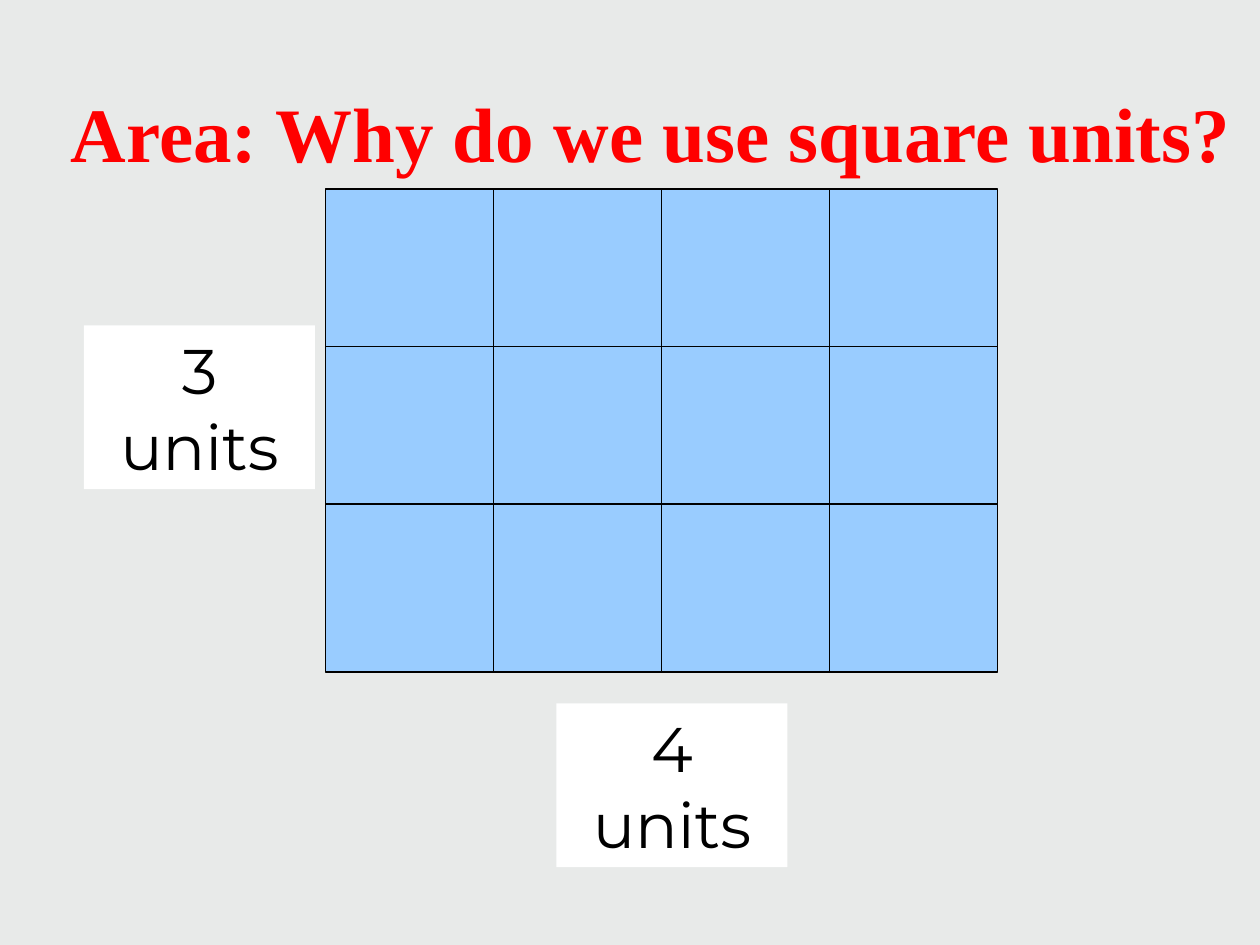
"""Build a slide that shows a 3 by 4 area split into square units."""
from lxml.etree import SubElement
from pptx import Presentation
from pptx.dml.color import RGBColor
from pptx.enum.shapes import MSO_CONNECTOR, MSO_SHAPE
from pptx.enum.text import MSO_ANCHOR, PP_ALIGN
from pptx.oxml.ns import qn
from pptx.util import Inches, Pt


def paint(form, code):
    form.solid() if hasattr(form, "solid") else None
    color = form.fore_color if hasattr(form, "fore_color") else form.color
    color.rgb = RGBColor.from_string(code)


def write(shape, text, face, size, code):
    frame = shape.text_frame
    frame.word_wrap = True
    para = frame.paragraphs[0]
    para.text = text
    para.alignment = PP_ALIGN.CENTER
    para.font.name = face
    para.font.size = Pt(size)
    paint(para.font, code)
    return frame, para


deck = Presentation()
deck.slide_width, deck.slide_height = Inches(10), Inches(7.5)
slide = deck.slides.add_slide(deck.slide_layouts[6])
paint(slide.background.fill, "E8EAE9")
shapes = slide.shapes

unit = deck.slide_width // 120
left, top, wide, high = 31, 18, 64, 46
col, row = 16, 15
right, base = left + wide, top + high

area = shapes.add_shape(MSO_SHAPE.RECTANGLE, left * unit, top * unit, wide * unit, high * unit)
area.shadow.inherit = False
paint(area.fill, "99CCFF")
paint(area.line, "000000")
area.line.width = Pt(0.75)

title = shapes.add_textbox(4 * unit, 5 * unit, 116 * unit, 15 * unit)
frame, para = write(title, "Area: Why do we use square units?", "Times New Roman", 44, "FF0000")
frame.vertical_anchor = MSO_ANCHOR.MIDDLE
para.font.bold = True

for text, x, y in [("3 units", 8, 31), ("4 units", 53, 67)]:
    label = shapes.add_textbox(x * unit, y * unit, 22 * unit, Inches(1.3))
    paint(label.fill, "FFFFFF")
    write(label, text, "Montserrat", 36, "000000")

rows = [(left, top + row * n, right, top + row * n) for n in (1, 2)]
cols = [(left + col * n, top, left + col * n, base) for n in (1, 2, 3)]
for ends in rows + cols:
    line = shapes.add_connector(MSO_CONNECTOR.STRAIGHT, *[end * unit for end in ends])
    paint(line.line, "000000")
    line.line.width = Pt(0.75)
    SubElement(line._element.spPr, qn("a:effectLst"))
    if ends[0] == left + wide // 2:
        line.begin_connect(area, 0)
        line.end_connect(area, 2)

deck.save("out.pptx")
